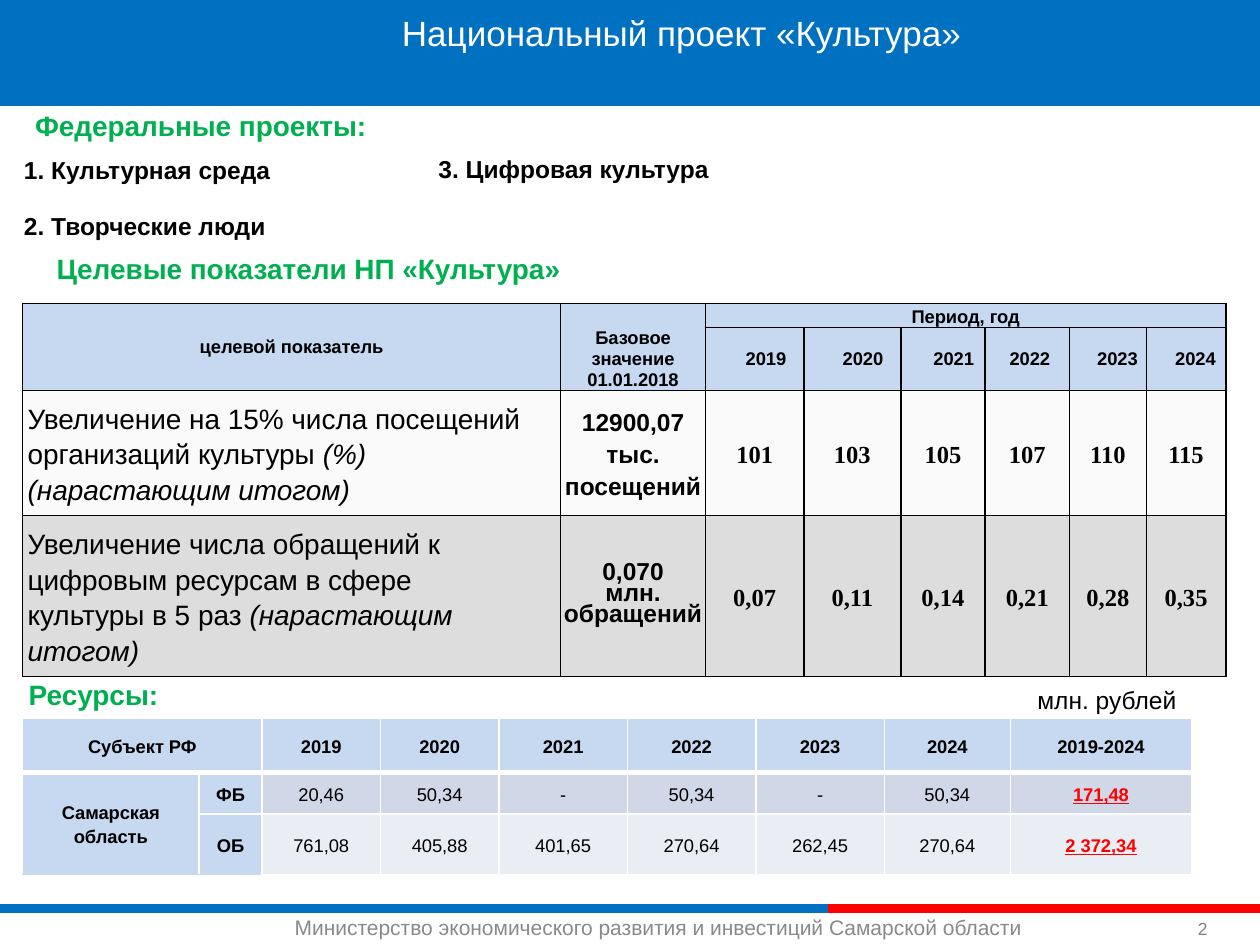
from lxml.etree import SubElement
from pptx import Presentation
from pptx.dml.color import RGBColor
from pptx.enum.shapes import MSO_CONNECTOR, MSO_SHAPE
from pptx.enum.text import MSO_ANCHOR, MSO_AUTO_SIZE, PP_ALIGN
from pptx.oxml import parse_xml
from pptx.oxml.ns import nsdecls, qn
from pptx.util import Inches, Pt

BLUE = RGBColor(0x00, 0x70, 0xC1)
RED = RGBColor(0xFF, 0x00, 0x00)
GREEN = RGBColor(0x00, 0xB0, 0x50)
BLACK = RGBColor(0x00, 0x00, 0x00)
WHITE = RGBColor(0xFF, 0xFF, 0xFF)
GRAY = RGBColor(0x89, 0x89, 0x89)
DIM = RGBColor(0x80, 0x80, 0x80)
HEAD = RGBColor(0xC6, 0xD9, 0xF1)
PALE = RGBColor(0xFA, 0xFA, 0xFA)
SHADE = RGBColor(0xDD, 0xDD, 0xDD)
ROW_A = RGBColor(0xD0, 0xD8, 0xE8)
ROW_B = RGBColor(0xE9, 0xED, 0xF4)
LEFT, MID = PP_ALIGN.LEFT, PP_ALIGN.CENTER


class Deck:
    """Holds the style and the current slide, and draws each kind of element."""

    def __init__(self, font="Arial"):
        self.font = font
        self.prs = Presentation()
        self.prs.slide_width, self.prs.slide_height = Inches(10), Inches(7.5)
        self.slide = self.prs.slides.add_slide(self.prs.slide_layouts[3])
        self.shapes = self.slide.shapes

    def fill_text(self, frame, text, size, color=BLACK, bold=False, align=LEFT,
                  space=None, after=0, indent=0, tail="", font=None, under=None):
        frame.text = text
        if tail:
            frame.paragraphs[-1].add_run().text = tail
        for para in frame.paragraphs:
            props = para._p.get_or_add_pPr()
            props.set("marL", str(Inches(indent)))
            props.set("indent", "0")
            SubElement(props, qn("a:buNone"))
            para.alignment = align
            para.space_before, para.space_after = Pt(0), Pt(after)
            if space:
                para.line_spacing = space
            for run in para.runs:
                run.font.name = font or self.font
                run.font.size = Pt(size)
                run.font.bold = bold
                run.font.underline = under
                run.font.color.rgb = color
        if tail:
            frame.paragraphs[-1].runs[-1].font.italic = True

    def place(self, shape, box, text, size, anchor=MSO_ANCHOR.TOP, wrap=True, **style):
        shape.left, shape.top, shape.width, shape.height = map(Inches, box)
        frame = shape.text_frame
        frame.word_wrap = wrap
        frame.auto_size = MSO_AUTO_SIZE.NONE
        frame.vertical_anchor = anchor
        self.fill_text(frame, text, size, **style)

    def label(self, box, text, size, **style):
        self.place(self.shapes.add_textbox(*map(Inches, box)), box, text, size, **style)

    def holder(self, index, box, text, size, **style):
        self.place(self.slide.placeholders[index], box, text, size, **style)

    def banner(self, height):
        bar = self.shapes.add_shape(MSO_SHAPE.RECTANGLE, 0, 0, Inches(10), Inches(height))
        bar.shadow.inherit = False
        bar.fill.solid()
        bar.fill.fore_color.rgb = BLUE
        bar.line.fill.background()
        self.shapes.title.element.addprevious(bar.element)

    def line(self, start, end, top, color):
        line = self.shapes.add_connector(
            MSO_CONNECTOR.STRAIGHT, Inches(start), Inches(top), Inches(end), Inches(top))
        line.line.color.rgb = color
        line.line.width = Pt(5)
        SubElement(line.element.spPr, qn("a:effectLst"))

    def table(self, left, top, cols, rows):
        grid = self.shapes.add_table(
            len(rows), len(cols), Inches(left), Inches(top),
            Inches(sum(cols)), Inches(sum(rows))).table
        for col, width in zip(grid.columns, cols):
            col.width = Inches(width)
        for row, height in zip(grid.rows, rows):
            row.height = Inches(height)
        return grid

    def cell(self, cell, text, size, fill, edge=BLACK, sides="LRTB", base=1,
             pad=0.01, anchor=MSO_ANCHOR.MIDDLE, **style):
        cell.margin_left = cell.margin_right = Inches(pad)
        cell.margin_top = cell.margin_bottom = 0
        cell.vertical_anchor = anchor
        props = cell._tc.get_or_add_tcPr()
        for side in sides:
            width = Pt(base if side == "B" else 1)
            props.append(parse_xml(
                f'<a:ln{side} {nsdecls("a")} w="{width}"><a:solidFill>'
                f'<a:srgbClr val="{edge}"/></a:solidFill></a:ln{side}>'))
        cell.fill.solid()
        cell.fill.fore_color.rgb = fill
        self.fill_text(cell.text_frame, text, size, **style)


def goals(deck):
    """Draws the table of target figures."""
    grid = deck.table(0.18, 2.41, [4.27, 1.15, 0.78, 0.77, 0.67, 0.67, 0.61, 0.63],
                      [0.19, 0.3, 0.99, 1.28])
    grid.cell(0, 0).merge(grid.cell(1, 0))
    grid.cell(0, 1).merge(grid.cell(1, 1))
    grid.cell(0, 2).merge(grid.cell(0, 7))
    for row in range(2):
        for col in range(8):
            deck.cell(grid.cell(row, col), "", 10.5, HEAD)
    head = dict(size=10.5, fill=HEAD, sides="", bold=True, align=MID)
    deck.cell(grid.cell(0, 0), "целевой показатель", space=Pt(12), **head)
    deck.cell(grid.cell(0, 1), "Базовое значение\n01.01.2018", space=Pt(12),
              anchor=MSO_ANCHOR.BOTTOM, **head)
    deck.cell(grid.cell(0, 2), "Период, год", space=1.15, anchor=MSO_ANCHOR.TOP, **head)
    for step, indent in enumerate([0.18, 0.17, 0.17, 0.04, 0.15, 0.15]):
        deck.cell(grid.cell(1, 2 + step), str(2019 + step), space=Pt(12),
                  indent=indent, **head)
    body = [
        ("Увеличение на 15% числа посещений организаций культуры ",
         "(%) (нарастающим итогом)", "12900,07\nтыс. посещений", 1.15, 0, PALE,
         ["101", "103", "105", "107", "110", "115"]),
        ("Увеличение числа обращений к цифровым ресурсам в сфере\nкультуры в 5 раз ",
         "(нарастающим итогом)", "0,070\nмлн. обращений", Pt(12), 0.01, SHADE,
         ["0,07", "0,11", "0,14", "0,21", "0,28", "0,35"]),
    ]
    for row, (name, tail, base, space, pad, fill, values) in enumerate(body, 2):
        deck.cell(grid.cell(row, 0), name, 16, fill, tail=tail, space=1.15, indent=0.03)
        deck.cell(grid.cell(row, 1), base, 14, fill, pad=pad, space=space,
                  bold=True, align=MID)
        for col, value in enumerate(values, 2):
            deck.cell(grid.cell(row, col), value, 14, fill, pad=0.03, space=1.15,
                      bold=True, align=MID, font="Times New Roman")


def funds(deck):
    """Draws the table of resources."""
    grid = deck.table(0.18, 5.7, [1.4, 0.5, 0.94, 0.94, 1.02, 1.02, 1.02, 1, 1.44],
                      [0.43, 0.33, 0.48])
    grid.cell(0, 0).merge(grid.cell(0, 1))
    grid.cell(1, 0).merge(grid.cell(2, 0))
    years = [str(year) for year in range(2019, 2025)]
    look = dict(size=10.5, align=MID, space=1.15, after=10)
    for col, text in enumerate(["Субъект РФ", "", *years, "2019-2024"]):
        deck.cell(grid.cell(0, col), text, fill=HEAD, edge=WHITE, base=3,
                  pad=0.07, bold=True, **look)
    body = [
        ("Самарская область", "ФБ", ROW_A,
         ["20,46", "50,34", "-", "50,34", "-", "50,34", "171,48"]),
        ("", "ОБ", ROW_B,
         ["761,08", "405,88", "401,65", "270,64", "262,45", "270,64", "2 372,34"]),
    ]
    for row, (area, name, fill, values) in enumerate(body, 1):
        for col, text in enumerate([area, name]):
            deck.cell(grid.cell(row, col), text, fill=HEAD, edge=HEAD, sides="RB",
                      pad=0.07, bold=True, **look)
        for col, value in enumerate(values, 2):
            total = col == 8
            deck.cell(grid.cell(row, col), value, fill=fill, edge=WHITE, sides="RB",
                      bold=total, under=total, color=RED if total else BLACK, **look)


def main():
    """Builds the slide and saves it."""
    deck = Deck()
    deck.banner(0.84)
    deck.line(0, 6.57, 7.21, BLUE)
    deck.line(6.57, 10, 7.21, RED)
    deck.label((2.24, 7.21, 6.54, 0.3),
               "Министерство экономического развития и инвестиций Самарской области",
               12, color=GRAY)
    deck.label((9.41, 7.1, 0.56, 0.4), "2", 10, color=DIM, anchor=MSO_ANCHOR.BOTTOM)
    deck.holder(0, (0.85, 0.04, 9.12, 0.44), "Национальный проект «Культура»", 20,
                color=WHITE, align=MID)
    deck.holder(1, (0.09, 1.18, 3.2, 0.77), "1. Культурная среда\n2. Творческие люди",
                14, bold=True, after=15)
    deck.holder(2, (3.38, 1.17, 6.5, 0.34), "3. Цифровая культура", 14, bold=True)
    deck.label((0.18, 0.81, 4.98, 0.37), "Федеральные проекты:", 16,
               color=GREEN, bold=True)
    deck.label((0.35, 1.95, 6.69, 0.37), "Целевые показатели НП «Культура»", 16,
               color=GREEN, bold=True)
    funds(deck)
    deck.label((0.13, 5.33, 1.3, 0.37), "Ресурсы:", 16, color=GREEN, bold=True, wrap=False)
    goals(deck)
    deck.label((8.13, 5.35, 1.31, 0.37), "млн. рублей", 14, align=MID, space=1.15,
               wrap=False)
    deck.prs.save("out.pptx")


if __name__ == "__main__":
    main()
